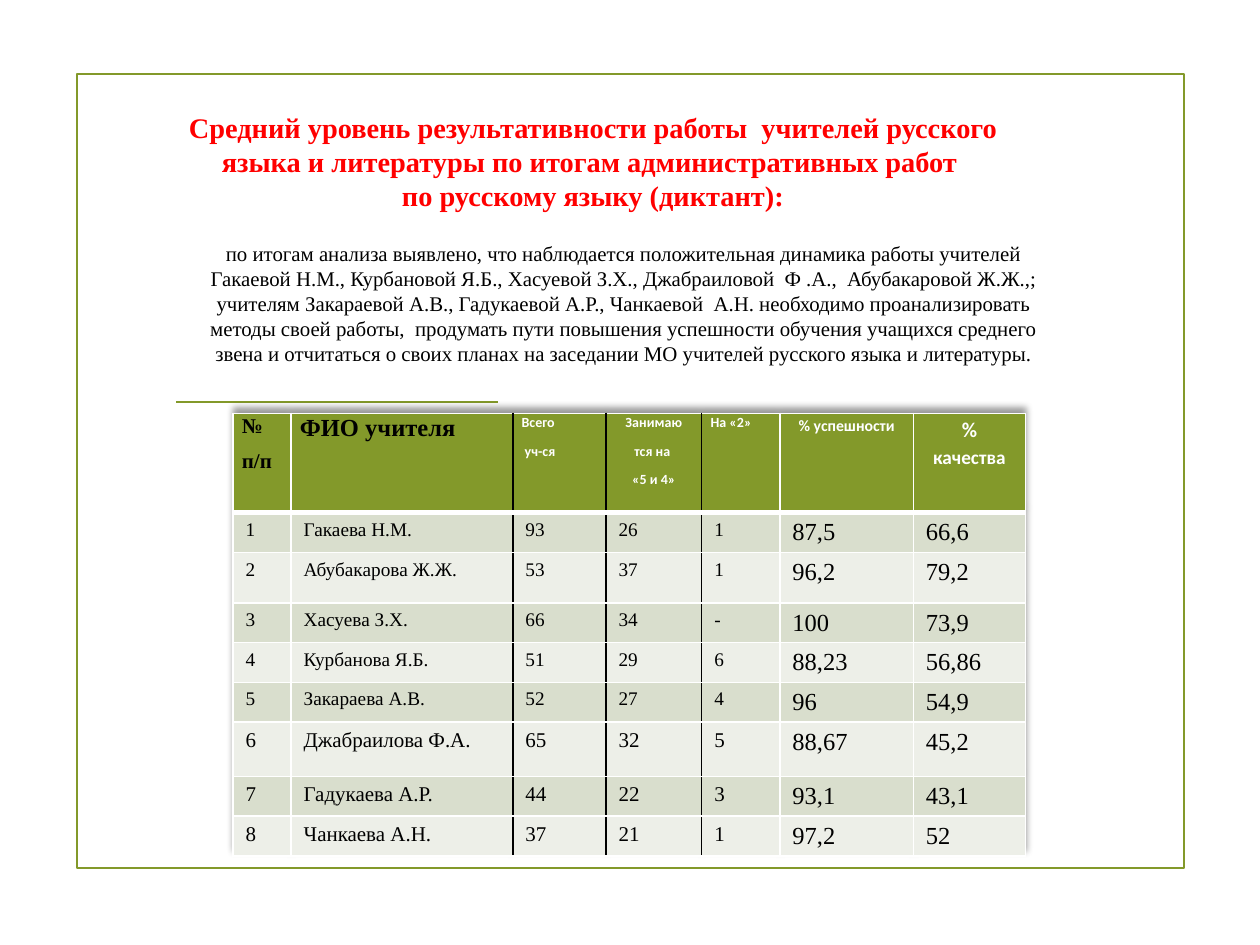
from lxml import etree
from pptx import Presentation
from pptx.dml.color import RGBColor
from pptx.enum.shapes import MSO_CONNECTOR, MSO_SHAPE
from pptx.enum.text import MSO_ANCHOR, MSO_AUTO_SIZE, PP_ALIGN
from pptx.oxml import parse_xml
from pptx.oxml.ns import qn
from pptx.util import Inches, Pt

LEFT, CENTER = PP_ALIGN.LEFT, PP_ALIGN.CENTER
TOP, BOTTOM = MSO_ANCHOR.TOP, MSO_ANCHOR.BOTTOM
NO_AUTOFIT = MSO_AUTO_SIZE.NONE
RECTANGLE, STRAIGHT = MSO_SHAPE.RECTANGLE, MSO_CONNECTOR.STRAIGHT

SERIF, SANS = "Times New Roman", "Calibri"
GREEN, RED, BLACK, WHITE = "83992A", "FF0000", "000000", "FFFFFF"
BANDS = ["D9DECD", "EDEFE8"]
GRID_COLUMNS, GRID_ROWS = 100, 75

TITLE = ("Средний уровень результативности работы  учителей русского языка "
         "и литературы по итогам административных работ \v"
         "по русскому языку (диктант):")
SUMMARY = ("по итогам анализа выявлено, что наблюдается положительная динамика "
           "работы учителей Гакаевой Н.М., Курбановой Я.Б., Хасуевой З.Х., "
           "Джабраиловой  Ф .А.,  Абубакаровой Ж.Ж.,; учителям Закараевой А.В., "
           "Гадукаевой А.Р., Чанкаевой  А.Н. необходимо проанализировать методы "
           "своей работы,  продумать пути повышения успешности обучения учащихся "
           "среднего звена и отчитаться о своих планах на заседании МО учителей "
           "русского языка и литературы.")

# Header cells: lines with sizes, font, colour, alignment, line spacing, space after
HEADERS = [
    ([("№", 12), ("п/п", 12)], SERIF, BLACK, LEFT, 1.05, 6),
    ([("ФИО учителя", 14)], SERIF, BLACK, LEFT, 1.05, 6),
    ([("Всего", 8), (" уч-ся", 8)], SANS, WHITE, LEFT, 1.05, 6),
    ([("Занимаю", 8), ("тся на ", 8), ("«5 и 4»", 8)], SANS, WHITE, CENTER, 1.05, 6),
    ([("На «2»", 8)], SANS, WHITE, LEFT, 1.05, 6),
    ([("% успешности", 9)], SANS, WHITE, CENTER, 1.15, 0),
    ([("%", 12), ("качества", 11)], SANS, WHITE, CENTER, 1.15, 0),
]
TEACHERS = [
    ("Гакаева Н.М.", "93", "26", "1", "87,5", "66,6"),
    ("Абубакарова Ж.Ж.", "53", "37", "1", "96,2", "79,2"),
    ("Хасуева З.Х.", "66", "34", "-", "100", "73,9"),
    ("Курбанова Я.Б.", "51", "29", "6", "88,23", "56,86"),
    ("Закараева А.В.", "52", "27", "4", "96", "54,9"),
    ("Джабраилова Ф.А.", "65", "32", "5", "88,67", "45,2"),
    ("Гадукаева А.Р.", "44", "22", "3", "93,1", "43,1"),
    ("Чанкаева А.Н.", "37", "21", "1", "97,2", "52"),
]
COLUMN_WIDTHS = [4.6, 17.6, 7.4, 7.6, 6.2, 10.6, 8.9]
ROW_HEIGHTS = [7.9, 2.9, 4, 2.9, 2.9, 2.9, 4.3, 2.9, 2.9]
BLACK_EDGES = {2, 3, 4}  # inner column edges drawn in black
FIRST_PERCENT_COLUMN = 5
FIRST_LARGE_ROW = 6

TABLE_SHADOW = (
    '<a:effectLst xmlns:a="http://schemas.openxmlformats.org/drawingml/2006/main">'
    '<a:outerShdw blurRad="50800" dist="38100" dir="16200000" rotWithShape="0">'
    '<a:srgbClr val="000000"><a:alpha val="40000"/></a:srgbClr>'
    '</a:outerShdw></a:effectLst>')


def color(value):
    return RGBColor.from_string(value)


class SlideBuilder:
    def __init__(self, deck):
        self.slide = deck.slides.add_slide(deck.slide_layouts[1])
        self.column = deck.slide_width / GRID_COLUMNS
        self.row = deck.slide_height / GRID_ROWS

    def x(self, columns):
        return round(columns * self.column)

    def y(self, rows):
        return round(rows * self.row)

    def area(self, left, top, width, height):
        return self.x(left), self.y(top), self.x(width), self.y(height)

    def style(self, para, size, font=SERIF, ink=BLACK, bold=False, align=LEFT):
        para.alignment = align
        para.font.size, para.font.name, para.font.bold = Pt(size), font, bold
        para.font.color.rgb = color(ink)

    def frame(self, *area):
        box = self.slide.shapes.add_shape(RECTANGLE, *self.area(*area))
        box.shadow.inherit = False
        box.fill.background()
        box.line.color.rgb, box.line.width = color(GREEN), Pt(1.25)

    def rule(self, left, right, top):
        line = self.slide.shapes.add_connector(
            STRAIGHT, self.x(left), self.y(top), self.x(right), self.y(top))
        line.line.color.rgb, line.line.width = color(GREEN), Pt(1.25)
        etree.SubElement(line._element.spPr, qn("a:effectLst"))

    def placeholder(self, index, area, text, size, spacing, anchor, **look):
        box = self.slide.placeholders[index]
        box.left, box.top, box.width, box.height = self.area(*area)
        frame = box.text_frame
        frame.word_wrap, frame.auto_size = True, NO_AUTOFIT
        frame.vertical_anchor = anchor
        frame.text = text
        para = frame.paragraphs[0]
        properties = para._p.get_or_add_pPr()
        properties.set("marL", "0")
        properties.set("indent", "0")
        etree.SubElement(properties, qn("a:buNone"))
        para.line_spacing, para.space_before = Pt(spacing), Pt(0)
        self.style(para, size, align=CENTER, **look)
        return frame

    def table(self, left, top):
        area = self.area(left, top, sum(COLUMN_WIDTHS), sum(ROW_HEIGHTS))
        table = self.slide.shapes.add_table(
            len(ROW_HEIGHTS), len(COLUMN_WIDTHS), *area).table
        table._tbl.tblPr.insert(0, parse_xml(TABLE_SHADOW))
        for column, width in zip(table.columns, COLUMN_WIDTHS):
            column.width = self.x(width)
        for row, height in zip(table.rows, ROW_HEIGHTS):
            row.height = self.y(height)
        return table

    def borders(self, cell, column, bottom):
        def edge(index):
            return BLACK if index in BLACK_EDGES else WHITE

        sides = [("L", edge(column), 1), ("R", edge(column + 1), 1),
                 ("T", WHITE, 1), ("B", WHITE, bottom)]
        for side, ink, width in sides:
            line = etree.SubElement(cell._tc.get_or_add_tcPr(),
                                    qn(f"a:ln{side}"), w=str(Pt(width)))
            fill = etree.SubElement(line, qn("a:solidFill"))
            etree.SubElement(fill, qn("a:srgbClr"), val=ink)

    def paint(self, cell, column, fill, bottom=1):
        self.borders(cell, column, bottom)
        cell.fill.solid()
        cell.fill.fore_color.rgb = color(fill)

    def header_cell(self, cell, column, lines, font, ink, align, spacing, after):
        self.paint(cell, column, GREEN, bottom=3)
        cell.margin_left = cell.margin_right = Inches(0.07)
        cell.margin_top = cell.margin_bottom = 0
        cell.text = "\n".join(text for text, size in lines)
        for para, (text, size) in zip(cell.text_frame.paragraphs, lines):
            para.line_spacing, para.space_after = spacing, Pt(after)
            self.style(para, size, font, ink, True, align)

    def body_cell(self, cell, column, text, size, fill):
        self.paint(cell, column, fill)
        cell.text = text
        self.style(cell.text_frame.paragraphs[0], size)


def main():
    deck = Presentation()
    deck.slide_width, deck.slide_height = Inches(10), Inches(7.5)
    page = SlideBuilder(deck)

    # Frame and divider
    page.frame(6.1, 5.9, 87.9, 63)
    page.rule(14, 39.5, 31.9)

    # Title and summary
    title = page.placeholder(0, (13.4, 9, 67.3, 11.9), TITLE, 16.2, 19.4,
                             BOTTOM, ink=RED, bold=True)
    title.margin_bottom = Inches(0.41)
    page.placeholder(1, (14.6, 18.6, 69.7, 11.9), SUMMARY, 11.9, 14.3, TOP)

    # Results by teacher
    table = page.table(18.5, 32.8)
    for column, header in enumerate(HEADERS):
        page.header_cell(table.cell(0, column), column, *header)
    for number, teacher in enumerate(TEACHERS, start=1):
        base_size = 12 if number >= FIRST_LARGE_ROW else 11
        for column, text in enumerate((str(number), *teacher)):
            size = 14 if column >= FIRST_PERCENT_COLUMN else base_size
            page.body_cell(table.cell(number, column), column, text, size,
                           BANDS[(number - 1) % 2])

    deck.save("out.pptx")


if __name__ == "__main__":
    main()
